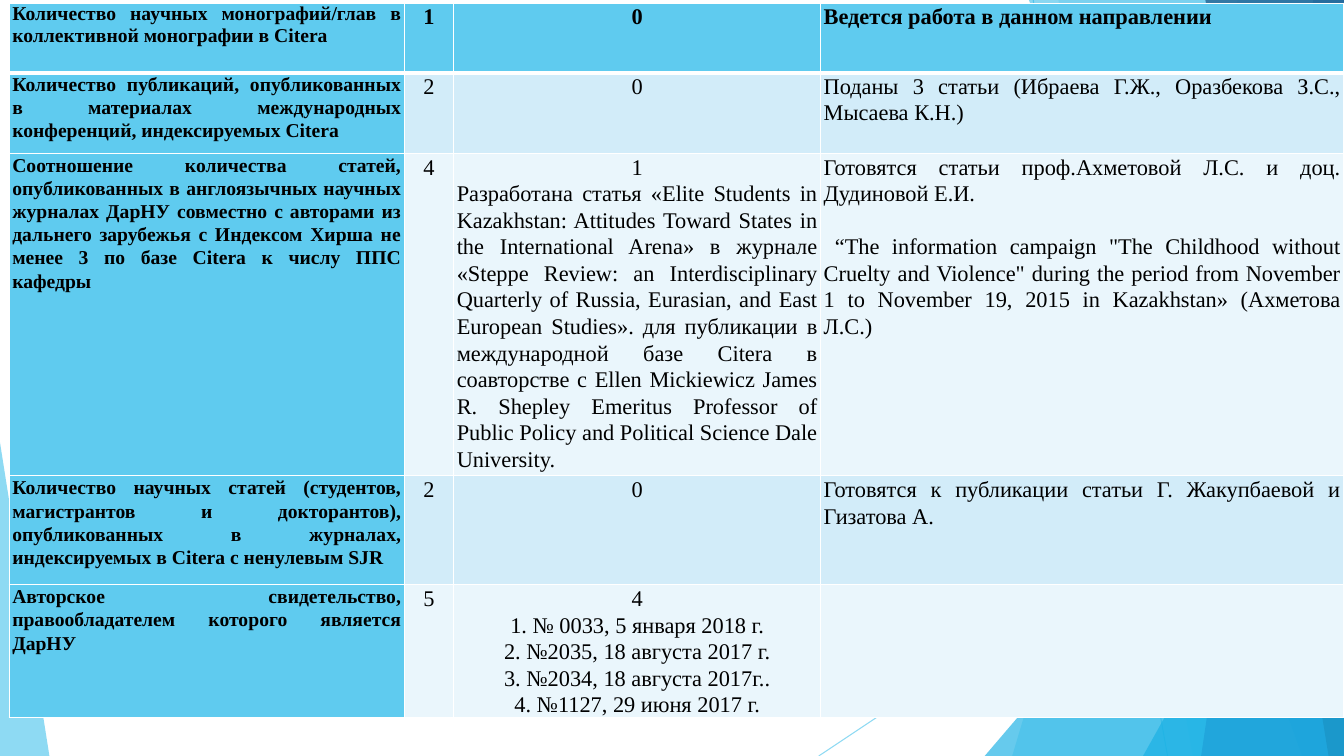
from lxml import etree
from pptx import Presentation
from pptx.dml.color import RGBColor
from pptx.enum.shapes import MSO_CONNECTOR, MSO_SHAPE
from pptx.enum.text import PP_ALIGN as Align
from pptx.oxml import parse_xml
from pptx.oxml.ns import nsdecls, qn
from pptx.util import Pt

BLACK = RGBColor(0x00, 0x00, 0x00)
WHITE = RGBColor(0xFF, 0xFF, 0xFF)
SKY = RGBColor(0x5F, 0xCB, 0xEF)
CYAN = RGBColor(0x17, 0xB0, 0xE4)
BLUE = RGBColor(0x2E, 0x83, 0xC3)
NAVY = RGBColor(0x22, 0x62, 0x92)
BAND_DARK = RGBColor(0xD2, 0xEC, 0xF9)
BAND_LIGHT = RGBColor(0xEA, 0xF6, 0xFC)

FONT = "Times New Roman"
SLIDE_BOX = (0, 0, 960, 540)
TABLE_BOX = (6.6, 2.2, 953.3, 510.5)
COLUMN_WIDTHS = (282.2, 35.3, 262.1, 373.7)
ROW_HEIGHTS = (49.7, 57.6, 230.4, 77.8, 95)
LINE_GAP = 19

# Each cell is a list of paragraphs: (text, alignment, format values)
INDICATORS = [
    ("Количество научных монографий/глав в коллективной монографии в Citera", "1",
     [("0", Align.CENTER, {})],
     [("Ведется работа в данном направлении", Align.JUSTIFY, {})]),
    ("Количество публикаций, опубликованных в материалах международных "
     "конференций, индексируемых Citera", "2",
     [("0", Align.CENTER, {})],
     [("Поданы 3 статьи (Ибраева Г.Ж., Оразбекова З.С., Мысаева К.Н.)",
       Align.JUSTIFY, {})]),
    ("Соотношение количества статей, опубликованных в англоязычных научных "
     "журналах ДарНУ совместно с авторами из дальнего зарубежья с Индексом Хирша "
     "не менее 3 по базе Citera к числу ППС кафедры", "4",
     [("1", Align.CENTER, {}),
      ("Разработана статья «Elite Students in Kazakhstan: Attitudes Toward States "
       "in the International Arena» в журнале «Steppe Review: an Interdisciplinary "
       "Quarterly of Russia, Eurasian, and East European Studies». для публикации "
       "в международной базе Citera в соавторстве с Ellen Mickiewicz James R. "
       "Shepley Emeritus Professor of Public Policy and Political Science "
       "Dale University.", Align.JUSTIFY, {})],
     [("Готовятся статьи проф.Ахметовой Л.С. и доц. Дудиновой Е.И.",
       Align.JUSTIFY, {"space_after": Pt(LINE_GAP)}),
      ("“The information campaign \"The Childhood without Cruelty and Violence\" "
       "during the period from November 1 to November 19, 2015 in Kazakhstan» "
       "(Ахметова Л.С.)", Align.JUSTIFY, {"first_indent": Pt(8)})]),
    ("Количество научных статей (студентов, магистрантов и докторантов), "
     "опубликованных в журналах, индексируемых в Citera с ненулевым SJR", "2",
     [("0", Align.CENTER, {})],
     [("Готовятся к публикации статьи Г. Жакупбаевой и Гизатова А.",
       Align.JUSTIFY, {})]),
    ("Авторское свидетельство, правообладателем которого является ДарНУ", "5",
     [(text, Align.CENTER, {}) for text in (
         "4", "1. № 0033, 5 января 2018 г.", "2. №2035, 18 августа 2017 г.",
         "3. №2034, 18 августа 2017г..", "4. №1127, 29 июня 2017 г.")],
     []),
]


def set_alpha(shape, percent):
    color = next(shape._element.spPr.iter(qn("a:srgbClr")))
    etree.SubElement(color, qn("a:alpha")).set("val", str(percent * 1000))


def paint(shape, color, alpha):
    shape.shadow.inherit = False
    shape.fill.solid()
    shape.fill.fore_color.rgb = color
    set_alpha(shape, alpha)
    shape.line.fill.background()


def add_ray(slide, start, end):
    ray = slide.shapes.add_connector(
        MSO_CONNECTOR.STRAIGHT, *(Pt(value) for value in start + end))
    ray.line.color.rgb = SKY
    ray.line.width = Pt(0.75)
    set_alpha(ray, 70)
    etree.SubElement(ray._element.spPr, qn("a:effectLst"))


def add_facet(slide, box, top_inset, bottom_inset, color, alpha):
    """Fill from a slanted left edge, inset from the box's right, to that right side."""
    left, top, width, height = box
    right, bottom = left + width, top + height
    builder = slide.shapes.build_freeform(right - top_inset, top, scale=Pt(1))
    builder.add_line_segments(
        [(right, top), (right, bottom), (right - bottom_inset, bottom)], close=True)
    paint(builder.convert_to_shape(), color, alpha)


def add_corner(slide, left, bottom, width, height, apex, color, alpha):
    """Triangle standing on bottom; apex is 0 for the left side, 1 for the right."""
    triangle = slide.shapes.add_shape(
        MSO_SHAPE.ISOSCELES_TRIANGLE,
        Pt(left), Pt(bottom - height), Pt(width), Pt(height))
    triangle.adjustments[0] = apex
    paint(triangle, color, alpha)


def draw_backdrop(slide, box):
    left, top, width, height = box
    right, bottom = left + width, top + height
    add_ray(slide, (right - 222, top), (right - 126, bottom))
    add_ray(slide, (right, top + 290), (right - 375.2, bottom))
    add_facet(slide, box, 75.8, 237.1, SKY, 36)
    add_facet(slide, box, 204, 108.2, SKY, 20)
    add_corner(slide, right - 256.6, bottom, 256.6, 300.2, 1, CYAN, 66)
    add_facet(slide, box, 224.9, 30.5, CYAN, 50)
    add_facet(slide, box, 21.8, 101.8, BLUE, 70)
    add_facet(slide, box, 98.9, 11, NAVY, 80)
    add_corner(slide, right - 143.5, bottom, 143.5, 257, 1, CYAN, 66)
    add_corner(slide, left, bottom, 35.3, 223.9, 0, SKY, 70)


def set_borders(cell, top_width, bottom_width):
    properties = cell._tc.get_or_add_tcPr()
    widths = {"lnL": 1, "lnR": 1, "lnT": top_width, "lnB": bottom_width}
    for index, (tag, width) in enumerate(widths.items()):
        properties.insert(index, parse_xml(
            f'<a:{tag} {nsdecls("a")} w="{Pt(width)}"><a:solidFill>'
            f'<a:srgbClr val="{WHITE}"/></a:solidFill></a:{tag}>'))


def write_cell(cell, paragraphs, size, bold):
    margins = {"margin_left": Pt(2.2), "margin_right": Pt(2.2),
               "margin_top": Pt(0), "margin_bottom": Pt(0)}
    for name, value in margins.items():
        setattr(cell, name, value)
    frame = cell.text_frame
    for index, (text, alignment, extra) in enumerate(paragraphs):
        paragraph = frame.add_paragraph() if index else frame.paragraphs[0]
        values = {"alignment": alignment, "line_spacing": 1.07, **extra}
        indent = values.pop("first_indent", None)
        for name, value in values.items():
            setattr(paragraph, name, value)
        if indent:
            paragraph._p.get_or_add_pPr().set("indent", str(indent))
        run = paragraph.add_run()
        run.text = text
        for name, value in {"name": FONT, "size": Pt(size), "bold": bold}.items():
            setattr(run.font, name, value)
        run.font.color.rgb = BLACK


def draw_indicator_table(slide, box):
    table = slide.shapes.add_table(
        len(ROW_HEIGHTS), len(COLUMN_WIDTHS), *(Pt(value) for value in box)).table
    for column, width in zip(table.columns, COLUMN_WIDTHS):
        column.width = Pt(width)
    for row, height in zip(table.rows, ROW_HEIGHTS):
        row.height = Pt(height)
    for row_index, (name, plan, done, note) in enumerate(INDICATORS):
        header = row_index == 0
        name_format = {"line_spacing": 1.0} if header else {"space_after": Pt(12)}
        contents = ([(name, Align.JUSTIFY, name_format)],
                    [(plan, Align.CENTER, {})], done, note)
        band = BAND_DARK if row_index % 2 else BAND_LIGHT
        for column_index, paragraphs in enumerate(contents):
            cell = table.cell(row_index, column_index)
            key = header or column_index == 0
            write_cell(cell, paragraphs, 16 if column_index else 14, key)
            cell.fill.solid()
            cell.fill.fore_color.rgb = SKY if key else band
            set_borders(cell, 3 if row_index == 1 else 1, 3 if header else 1)


def main():
    presentation = Presentation()
    presentation.slide_width, presentation.slide_height = Pt(960), Pt(540)
    slide = presentation.slides.add_slide(presentation.slide_layouts[6])
    draw_backdrop(slide, SLIDE_BOX)
    draw_indicator_table(slide, TABLE_BOX)
    presentation.save("out.pptx")


if __name__ == "__main__":
    main()
